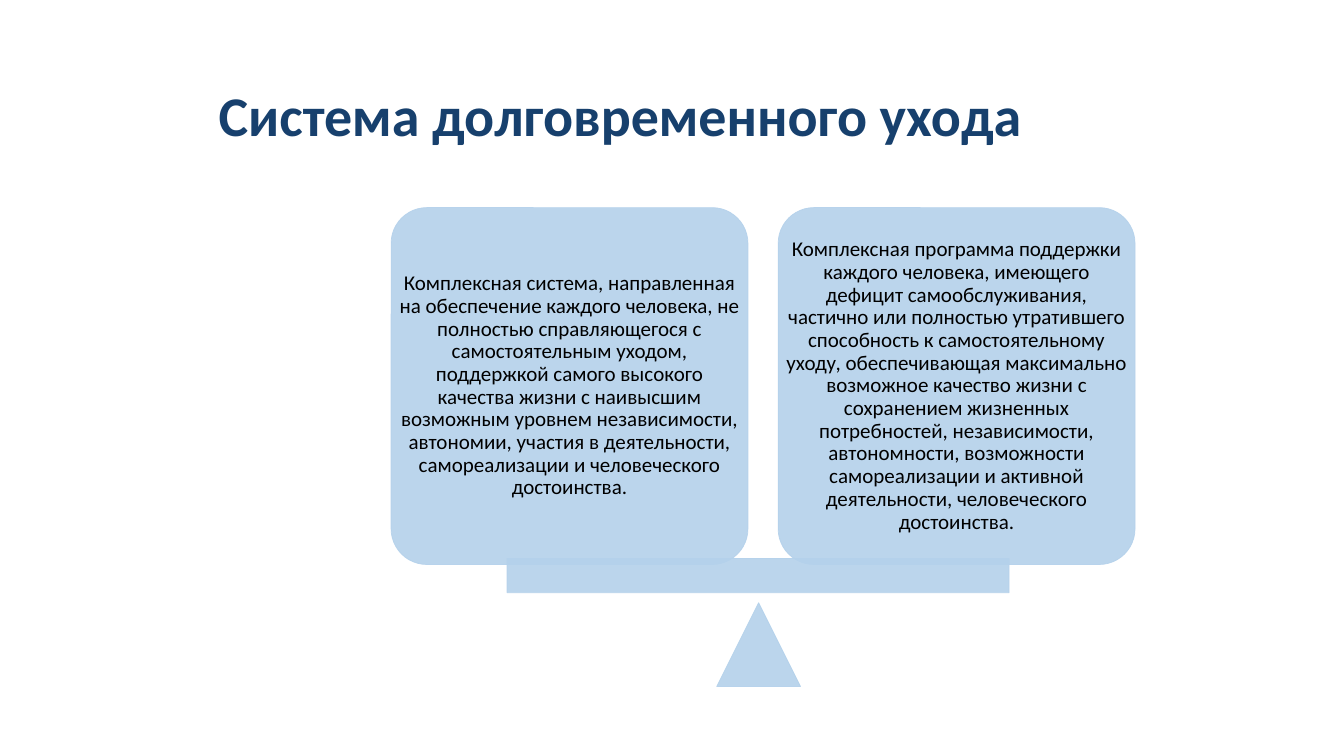
from dataclasses import dataclass

from lxml import etree
from pptx import Presentation
from pptx import util as u
from pptx.dml.color import RGBColor
from pptx.enum import shapes, text
from pptx.oxml.ns import qn

NAVY = RGBColor(0x17, 0x40, 0x6D)
PALE_BLUE = RGBColor(0xB4, 0xD1, 0xEB)
BLACK = RGBColor(0, 0, 0)
FONT = "Calibri"
OPACITY = 90  # percent

SLIDE_WIDTH, SLIDE_HEIGHT = u.Inches(13.33), u.Inches(7.5)


@dataclass(frozen=True)
class Area:
    """A rectangle in percent of the slide's width and height."""
    left: float
    top: float
    width: float
    height: float

    def lengths(self) -> tuple[int, int, int, int]:
        return (
            round(SLIDE_WIDTH * self.left / 100),
            round(SLIDE_HEIGHT * self.top / 100),
            round(SLIDE_WIDTH * self.width / 100),
            round(SLIDE_HEIGHT * self.height / 100),
        )


@dataclass(frozen=True)
class Block:
    kind: shapes.MSO_SHAPE
    area: Area


@dataclass(frozen=True)
class Label:
    words: str
    area: Area
    size: int
    color: RGBColor
    bold: bool = False
    align: text.PP_ALIGN = text.PP_ALIGN.LEFT
    side_margin: float = 0.1
    end_margin: float = 0.05


def add_block(slide, block: Block) -> None:
    shape = slide.shapes.add_shape(block.kind, *block.area.lengths())
    shape.shadow.inherit = False
    if block.kind == shapes.MSO_SHAPE.ROUNDED_RECTANGLE:
        shape.adjustments[0] = 0.1
    shape.line.width = u.Pt(0.5)
    for fill in (shape.fill, shape.line.fill):
        fill.solid()
        fill.fore_color.rgb = PALE_BLUE
    # Transparency of fill and outline
    for color in shape.element.spPr.iter(qn("a:srgbClr")):
        etree.SubElement(color, qn("a:alpha"), val=str(OPACITY * 1000))


def add_label(slide, label: Label) -> None:
    frame = slide.shapes.add_textbox(*label.area.lengths()).text_frame
    frame.word_wrap = True
    frame.vertical_anchor = text.MSO_ANCHOR.MIDDLE
    frame.margin_left = frame.margin_right = u.Inches(label.side_margin)
    frame.margin_top = frame.margin_bottom = u.Inches(label.end_margin)
    paragraph = frame.paragraphs[0]
    paragraph.text = label.words
    paragraph.alignment = label.align
    paragraph.line_spacing = 0.9
    font = paragraph.font
    font.name, font.size, font.bold = FONT, u.Pt(label.size), label.bold
    font.color.rgb = label.color


TITLE = Label("Система долговременного ухода", Area(15.53, 6, 81.83, 19.33),
              40, NAVY, bold=True)

# Two cards side by side on the scale
CARD_LEFT, CARD_STEP = 29.1, 28.8
DEFINITIONS = (
    "Комплексная система, направленная на обеспечение каждого человека, "
    "не полностью справляющегося с самостоятельным уходом, поддержкой самого "
    "высокого качества жизни с наивысшим возможным уровнем независимости, "
    "автономии, участия в деятельности, самореализации и человеческого "
    "достоинства.",
    "Комплексная программа поддержки каждого человека, имеющего дефицит "
    "самообслуживания, частично или полностью утратившего способность к "
    "самостоятельному уходу, обеспечивающая максимально возможное качество "
    "жизни с сохранением жизненных потребностей, независимости, автономности, "
    "возможности самореализации и активной деятельности, человеческого "
    "достоинства.",
)

# Support of the scale: pivot and beam
SUPPORT = (
    Block(shapes.MSO_SHAPE.ISOSCELES_TRIANGLE, Area(53.33, 79.73, 6.23, 11.07)),
    Block(shapes.MSO_SHAPE.RECTANGLE, Area(37.73, 73.87, 37.35, 4.53)),
)


def main() -> None:
    presentation = Presentation()
    presentation.slide_width = SLIDE_WIDTH
    presentation.slide_height = SLIDE_HEIGHT
    slide = presentation.slides.add_slide(presentation.slide_layouts[6])

    add_label(slide, TITLE)
    for column, words in enumerate(DEFINITIONS):
        area = Area(CARD_LEFT + column * CARD_STEP, 27.47, 26.55, 47.2)
        add_block(slide, Block(shapes.MSO_SHAPE.ROUNDED_RECTANGLE, area))
        add_label(slide, Label(words, area, 15, BLACK,
                               align=text.PP_ALIGN.CENTER,
                               side_margin=0.06, end_margin=0.06))
    for block in SUPPORT:
        add_block(slide, block)

    presentation.save("out.pptx")


if __name__ == "__main__":
    main()
